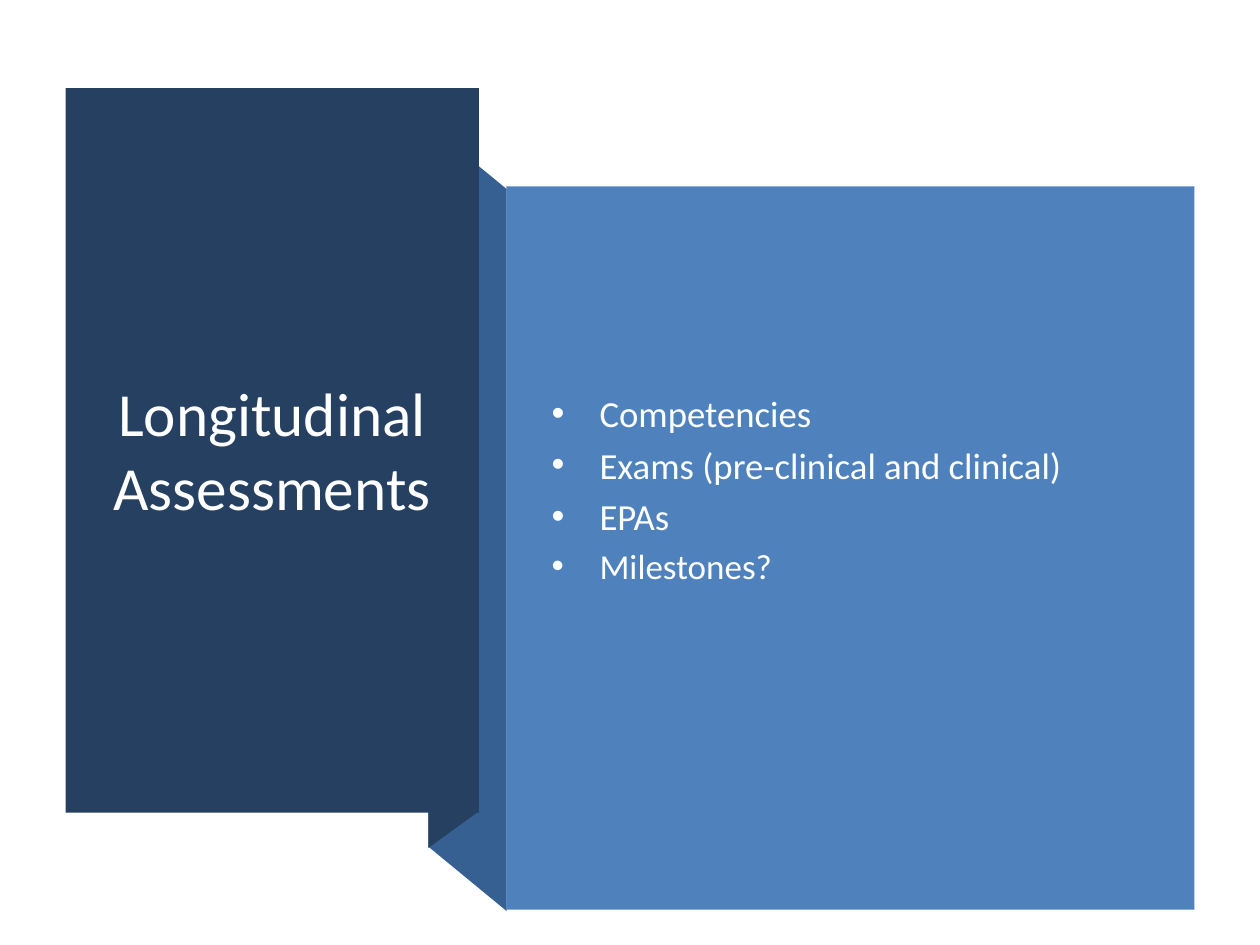
"""Build the Longitudinal Assessments slide with a folded ribbon panel."""
from pptx import Presentation
from pptx.dml.color import RGBColor
from pptx.enum.shapes import MSO_SHAPE as Shape
from pptx.enum.text import MSO_ANCHOR as Anchor, PP_ALIGN as Align
from pptx.oxml.ns import qn
from pptx.util import Inches, Pt
from lxml.etree import SubElement

NAVY = RGBColor(0x25, 0x40, 0x61)
STEEL = RGBColor(0x37, 0x60, 0x92)
BLUE = RGBColor(0x4F, 0x81, 0xBD)
WHITE = RGBColor(0xFF, 0xFF, 0xFF)
OFF_WHITE = RGBColor(0xFE, 0xFF, 0xFF)


def write(para, text, size=21, color=WHITE, font="Calibri", align=Align.LEFT, bullet=None, indent=0.38):
    para.alignment = align
    span = para.add_run()
    span.text = text
    span.font.name = font
    span.font.size = Pt(size)
    span.font.color.rgb = color
    if bullet:
        para.space_before = Pt(0.2 * size)
        props = para._p.get_or_add_pPr()
        props.set("marL", str(Inches(indent)))
        props.set("indent", str(-Inches(indent)))
        SubElement(props, qn("a:buFont")).set("typeface", "Arial")
        SubElement(props, qn("a:buChar")).set("char", bullet)


class Slide:
    def __init__(self, deck, font="Calibri"):
        self.page = deck.slides.add_slide(deck.slide_layouts[6])
        self.font = font

    def paint(self, shape, color):
        shape.shadow.inherit = False
        shape.fill.solid()
        shape.fill.fore_color.rgb = color
        shape.line.fill.background()

    def polygon(self, points, color):
        corners = [(Inches(x), Inches(y)) for x, y in points]
        builder = self.page.shapes.build_freeform(*corners[0])
        builder.add_line_segments(corners[1:], close=True)
        self.paint(builder.convert_to_shape(), color)

    def panel(self, left, top, width, height, color):
        area = map(Inches, (left, top, width, height))
        self.paint(self.page.shapes.add_shape(Shape.RECTANGLE, *area), color)

    def text(self, left, top, width, height, lines, **style):
        area = map(Inches, (left, top, width, height))
        frame = self.page.shapes.add_textbox(*area).text_frame
        frame.word_wrap = True
        frame.vertical_anchor = Anchor.MIDDLE
        for index, (line, size) in enumerate(lines):
            para = frame.add_paragraph() if index else frame.paragraphs[0]
            write(para, line, size=size, font=self.font, **style)


def main():
    deck = Presentation()
    deck.slide_width, deck.slide_height = Inches(10), Inches(7.5)
    slide = Slide(deck)

    slide.polygon([(4.02, 7.23), (3.4, 6.72), (3.4, 0.99), (4.02, 1.5)], STEEL)
    slide.polygon([(3.8, 6.44), (3.4, 6.73), (3.4, 0.99), (3.8, 0.7)], NAVY)
    slide.panel(0.52, 0.7, 3.28, 5.75, NAVY)
    slide.text(0.77, 1.07, 2.78, 4.99, [("Longitudinal Assessments", 35)], align=Align.CENTER)

    slide.panel(4.02, 1.48, 5.46, 5.74, BLUE)
    topics = [
        ("Competencies", 21),
        ("Exams (pre-clinical and clinical)", 21),
        ("EPAs", 21),
        ("Milestones?", 20),
    ]
    slide.text(4.28, 1.88, 4.88, 4, topics, color=OFF_WHITE, bullet="•")

    deck.save("out.pptx")


if __name__ == "__main__":
    main()
